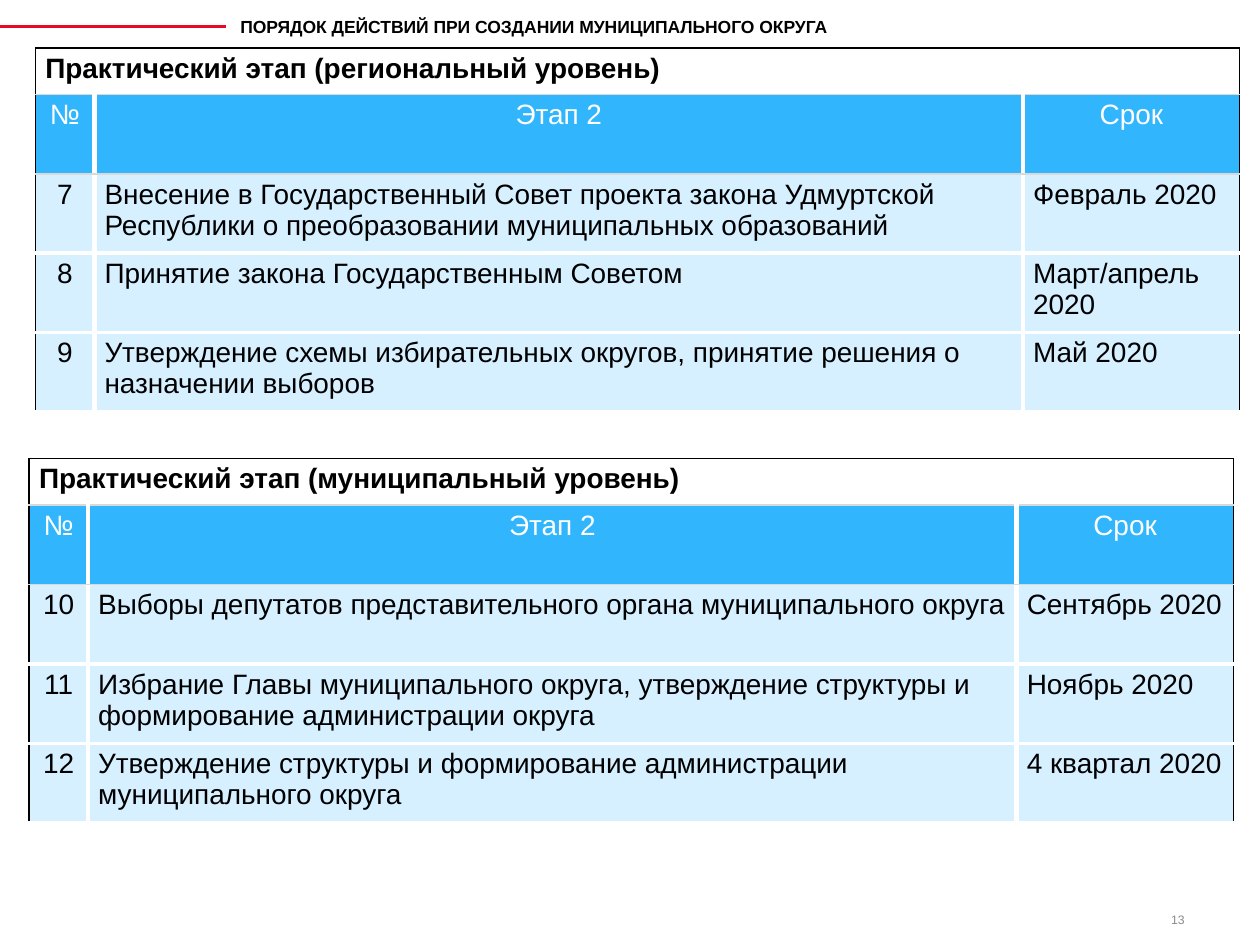
from lxml import etree
from pptx import Presentation
from pptx.dml.color import RGBColor
from pptx.enum.shapes import MSO_CONNECTOR
from pptx.enum.text import MSO_ANCHOR, PP_ALIGN
from pptx.oxml.ns import qn
from pptx.util import Inches, Pt

LEFT, CENTER, RIGHT = PP_ALIGN.LEFT, PP_ALIGN.CENTER, PP_ALIGN.RIGHT
TOP, MIDDLE = MSO_ANCHOR.TOP, MSO_ANCHOR.MIDDLE
STRAIGHT = MSO_CONNECTOR.STRAIGHT

BLACK = RGBColor(0x00, 0x00, 0x00)
WHITE = RGBColor(0xFF, 0xFF, 0xFF)
RED = RGBColor(0xE7, 0x09, 0x27)
BLUE = RGBColor(0x31, 0xB6, 0xFD)
PALE = RGBColor(0xD6, 0xF0, 0xFF)
SILVER = RGBColor(0xD9, 0xD9, 0xD9)
GRAY = RGBColor(0x8B, 0x8B, 0x8B)

WIDTH, HEIGHT = Inches(10), Inches(7.5)
UNIT = WIDTH // 1000
COLS = [47, 737, 172]
ROWS = [37, 63, 63, 63, 63]
OUTER = (BLACK, 1)
GAP = (WHITE, 3)
RULE = (SILVER, 0.96)
SPLIT = (WHITE, 2.21)

HEAD = ["№", "Этап 2", "Срок"]
REGION = [
    ["7", "Внесение в Государственный Совет проекта закона Удмуртской "
     "Республики о преобразовании муниципальных образований", "Февраль 2020"],
    ["8", "Принятие закона Государственным Советом", "Март/апрель 2020"],
    ["9", "Утверждение схемы избирательных округов, принятие решения о "
     "назначении выборов", "Май 2020"],
]
TOWN = [
    ["10", "Выборы депутатов представительного органа муниципального округа",
     "Сентябрь 2020"],
    ["11", "Избрание Главы муниципального округа, утверждение структуры и "
     "формирование администрации округа", "Ноябрь 2020"],
    ["12", "Утверждение структуры и формирование администрации "
     "муниципального округа", "4 квартал 2020"],
]


def assign(item, values):
    for name, value in values.items():
        setattr(item, name, value)


def write(frame, text, size, color, bold=False, align=LEFT):
    para = frame.paragraphs[0]
    para.alignment = align
    run = para.add_run()
    run.text = text
    assign(run.font, {"name": "Arial", "size": Pt(size), "bold": bold})
    run.font.color.rgb = color


def label(slide, box, text, size, color, wrap=True, anchor=TOP, **look):
    frame = slide.shapes.add_textbox(*[UNIT * n for n in box]).text_frame
    assign(frame, {"word_wrap": wrap, "vertical_anchor": anchor})
    write(frame, text, size, color, **look)


def edge(cell, lines):
    props = cell._tc.get_or_add_tcPr()
    for place, side in enumerate("LRTB"):
        color, width = lines[side]
        line = etree.Element(qn(f"a:ln{side}"), w=str(int(Pt(width))))
        fill = etree.SubElement(line, qn("a:solidFill"))
        etree.SubElement(fill, qn("a:srgbClr"), val=str(color))
        props.insert(place, line)


def borders(row, col):
    last = len(COLS) - 1
    lines = [OUTER, RULE, RULE] + [SPLIT] * (len(ROWS) - 2)
    return {
        "L": GAP if col and row else OUTER,
        "R": GAP if col < last and row else OUTER,
        "T": lines[row],
        "B": lines[row + 1],
    }


def header(slide, box):
    left, top, width, height = box
    line = slide.shapes.add_connector(
        STRAIGHT, UNIT * -42, UNIT * 21, UNIT * (left - 2), UNIT * 21)
    line.line.color.rgb = RED
    line.line.width = Pt(1.5)
    etree.SubElement(line._element.spPr, qn("a:effectLst"))
    label(slide, box, "ПОРЯДОК ДЕЙСТВИЙ ПРИ СОЗДАНИИ МУНИЦИПАЛЬНОГО ОКРУГА",
          10, BLACK, wrap=False, bold=True)


def stage(slide, left, top, title, steps):
    box = [UNIT * n for n in (left, top, sum(COLS), sum(ROWS))]
    table = slide.shapes.add_table(len(ROWS), len(COLS), *box).table
    for col, width in zip(table.columns, COLS):
        col.width = UNIT * width
    for row, height in zip(table.rows, ROWS):
        row.height = UNIT * height
    table.cell(0, 0).merge(table.cell(0, len(COLS) - 1))
    fills = [WHITE, BLUE] + [PALE] * len(steps)
    for r, texts in enumerate([[title, "", ""], HEAD] + steps):
        for c, text in enumerate(texts):
            cell = table.cell(r, c)
            cell.fill.solid()
            cell.fill.fore_color.rgb = fills[r]
            assign(cell, {"margin_left": UNIT * 8, "margin_right": UNIT * 8,
                          "margin_top": UNIT * 4, "margin_bottom": UNIT * 4})
            edge(cell, borders(r, c))
            if text:
                middle = r == 1 or (r > 1 and c == 0)
                write(cell.text_frame, text, 16, WHITE if r == 1 else BLACK,
                      bold=r == 0, align=CENTER if middle else LEFT)


def footer(slide, box):
    label(slide, box, "13", 7, GRAY, anchor=MIDDLE, align=RIGHT)


def main():
    deck = Presentation()
    assign(deck, {"slide_width": WIDTH, "slide_height": HEIGHT})
    slide = deck.slides.add_slide(deck.slide_layouts[6])
    header(slide, (181, 8, 487, 26))
    stage(slide, 28, 38, "Практический этап (региональный уровень)", REGION)
    stage(slide, 23, 364, "Практический этап (муниципальный уровень)", TOWN)
    footer(slide, (717, 718, 233, 24))
    deck.save("out.pptx")


if __name__ == "__main__":
    main()
